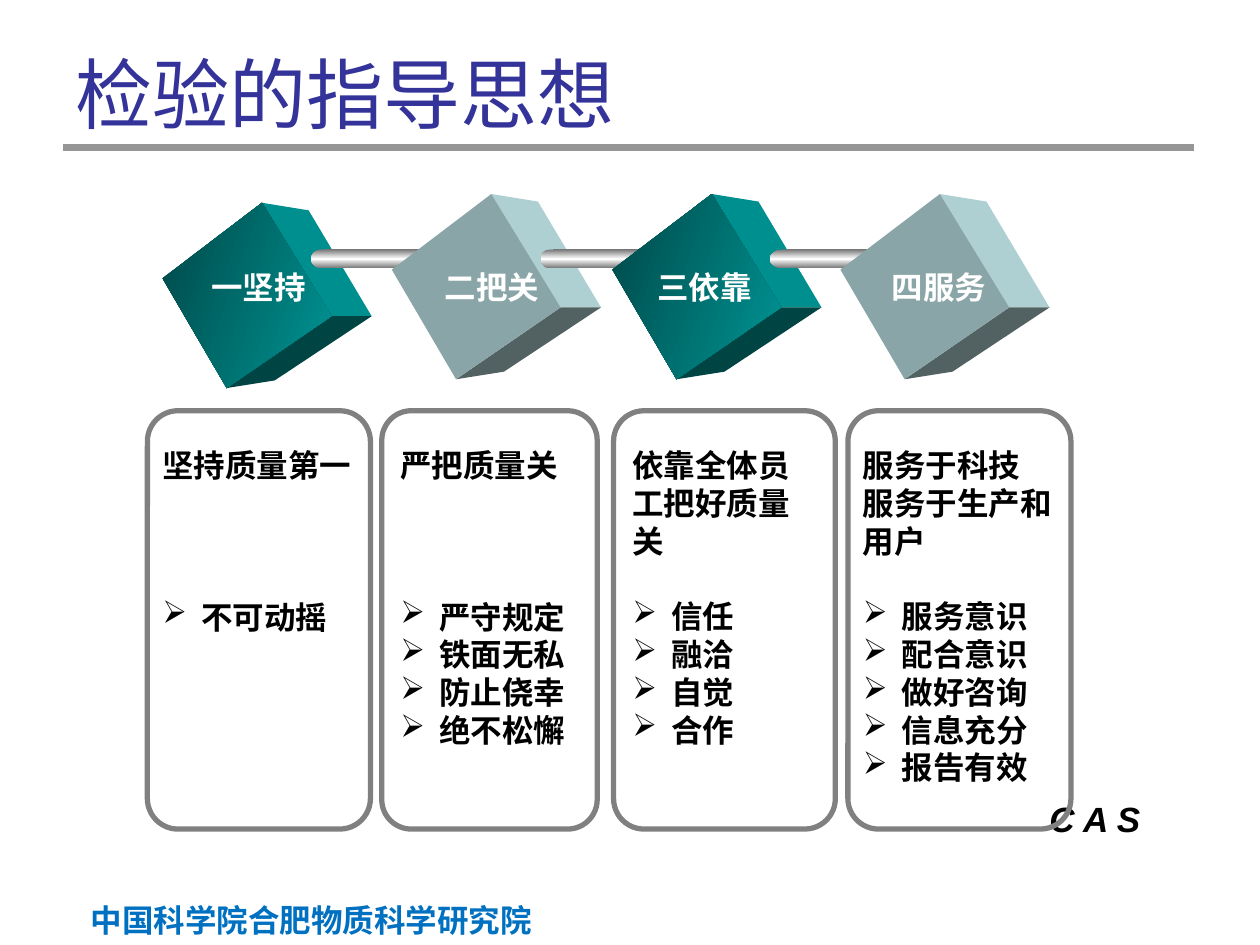
from typing import NamedTuple
from pptx import Presentation
from pptx.dml.color import RGBColor
from pptx.enum.shapes import MSO_CONNECTOR as Link, MSO_SHAPE as Kind
from pptx.enum.text import MSO_ANCHOR as Anchor, PP_ALIGN as Align
from pptx.oxml import parse_xml
from pptx.oxml.ns import nsdecls
from pptx.util import Inches, Pt


class Box(NamedTuple):
    x: float
    y: float
    w: float
    h: float


class Skin(NamedTuple):
    front: tuple
    side: str
    base: str


class Step(NamedTuple):
    name: str
    label: float
    cube: tuple
    skin: Skin
    card: Box
    note: Box
    wrap: bool
    heads: list
    gap: float
    items: list


class Rod(NamedTuple):
    x: float
    cap: float
    bar: float
    w: float


TEAL = Skin(("004848", "009494"), "008F8F", "004444")
PALE = Skin(("8AA5A8",), "AED0D2", "526263")
STEEL = ("767676", "FFFFFF", "767676")
BODY = {"name": "Arial", "size": Pt(18), "bold": True}

STEPS = [
    Step("一坚持", 1.58, (1.29, 1.61), TEAL, Box(1.17, 3.26, 1.77, 3.32),
         Box(1.19, 3.49, 1.79, 1.92), False, ["坚持质量第一"], 65, ["不可动摇"]),
    Step("二把关", 3.43, (3.11, 1.54), PALE, Box(3.03, 3.26, 1.71, 3.32),
         Box(3.08, 3.49, 1.53, 2.52), False, ["严把质量关"], 65,
         ["严守规定", "铁面无私", "防止侥幸", "绝不松懈"]),
    Step("三依靠", 5.12, (4.86, 1.54), TEAL, Box(4.87, 3.26, 1.76, 3.32),
         Box(4.92, 3.49, 1.67, 2.52), True, ["依靠全体员工把好质量关"], 21.6,
         ["信任", "融洽", "自觉", "合作"]),
    Step("四服务", 6.98, (6.67, 1.54), PALE, Box(6.73, 3.26, 1.77, 3.32),
         Box(6.75, 3.49, 1.75, 2.83), True, ["服务于科技", "服务于生产和用户"], 21.6,
         ["服务意识", "配合意识", "做好咨询", "信息充分", "报告有效"]),
]
RODS = [Rod(2.47, 0.17, 2.56, 0.82), Rod(4.29, 0.17, 4.39, 0.82),
        Rod(6.11, 0.22, 6.24, 1.07)]

LEFT, TOP, RIGHT, LOW = (0, 0.6), (0.79, 0), (1.34, 0.9), (0.51, 1.47)
TOP_BACK, RIGHT_BACK, LOW_BACK = (1.16, 0.06), (1.66, 0.9), (0.89, 1.41)


def tint(value: str) -> RGBColor:
    return RGBColor.from_string(value)


def place(box: Box) -> list:
    return [Inches(v) for v in box]


def paint(shape, tones: tuple, angle: int = 90) -> None:
    shape.shadow.inherit = False
    shape.line.fill.background()
    if len(tones) == 1:
        shape.fill.solid()
        shape.fill.fore_color.rgb = tint(tones[0])
        return
    last = len(tones) - 1
    stops = "".join(
        f'<a:gs pos="{i * 100000 // last}"><a:srgbClr val="{tone}"/></a:gs>'
        for i, tone in enumerate(tones))
    shape.fill.background()
    old = shape.element.spPr.find("./{*}noFill")
    new = parse_xml(f'<a:gradFill {nsdecls("a")}><a:gsLst>{stops}</a:gsLst>'
                    f'<a:lin ang="{angle * 60000}" scaled="0"/></a:gradFill>')
    shape.element.spPr.replace(old, new)


def style(run, color: str, look: dict) -> None:
    for key, value in look.items():
        setattr(run.font, key, value)
    run.font.color.rgb = tint(color)
    face = parse_xml(f'<a:ea {nsdecls("a")} typeface="{look["name"]}"/>')
    run.font._element.append(face)


def write(slide, box: Box, lines: list, color: str, look: dict, wrap: bool = True,
          align=Align.LEFT, anchor=Anchor.TOP) -> list:
    frame = slide.shapes.add_textbox(*place(box)).text_frame
    frame.word_wrap = wrap
    frame.vertical_anchor = anchor
    paras = []
    for i, line in enumerate(lines):
        para = frame.add_paragraph() if i else frame.paragraphs[0]
        para.alignment = align
        run = para.add_run()
        run.text = line
        style(run, color, look)
        paras.append(para)
    return paras


def bullet(para) -> None:
    props = para._p.get_or_add_pPr()
    props.set("marL", str(Inches(0.31)))
    props.set("indent", str(Inches(-0.31)))
    props.append(parse_xml(f'<a:buChar {nsdecls("a")} char="➢"/>'))


def face(slide, spot: tuple, points: list, tones: tuple) -> None:
    dots = [(Inches(spot[0] + x), Inches(spot[1] + y)) for x, y in points]
    pen = slide.shapes.build_freeform(*dots[0])
    pen.add_line_segments(dots[1:], close=True)
    paint(pen.convert_to_shape(), tones, 20)


def cube(slide, step: Step) -> None:
    skin = step.skin
    face(slide, step.cube, [TOP, TOP_BACK, RIGHT_BACK, RIGHT], (skin.side,))
    face(slide, step.cube, [RIGHT, RIGHT_BACK, LOW_BACK, LOW], (skin.base,))
    face(slide, step.cube, [LEFT, TOP, RIGHT, LOW], skin.front)


def link(slide, rod: Rod) -> None:
    for kind, x, w in ((Kind.OVAL, rod.x, rod.cap), (Kind.RECTANGLE, rod.bar, rod.w)):
        paint(slide.shapes.add_shape(kind, *place(Box(x, 1.98, w, 0.15))), STEEL)


def card(slide, box: Box) -> None:
    shape = slide.shapes.add_shape(Kind.ROUNDED_RECTANGLE, *place(box))
    shape.adjustments[0] = 0.137
    shape.shadow.inherit = False
    shape.fill.background()
    shape.line.color.rgb = tint("808080")
    shape.line.width = Pt(3)


def note(slide, step: Step) -> None:
    paras = write(slide, step.note, step.heads + step.items, "000000", BODY, step.wrap)
    items = paras[len(step.heads):]
    items[0].space_before = Pt(step.gap)
    for para in items:
        bullet(para)


def rule(slide) -> None:
    line = slide.shapes.add_connector(
        Link.STRAIGHT, *place(Box(0.5, 1.17, 9.48, 1.17)))
    line.line.color.rgb = tint("969696")
    line.line.width = Pt(3.6)
    line._element.spPr.append(parse_xml(f'<a:effectLst {nsdecls("a")}/>'))


def main() -> None:
    deck = Presentation()
    deck.slide_width, deck.slide_height = Inches(10), Inches(7.5)
    slide = deck.slides.add_slide(deck.slide_layouts[6])
    rule(slide)
    write(slide, Box(0.59, 7.1, 3.73, 0.4), ["中国科学院合肥物质科学研究院"],
          "0070C0", BODY, align=Align.RIGHT)
    write(slide, Box(8.23, 6.28, 0.94, 0.43), ["C A S"], "000000",
          {**BODY, "size": Pt(20), "italic": True}, wrap=False)
    write(slide, Box(0.5, 0.3, 6.08, 0.87), ["检验的指导思想"], "333399",
          {"name": "Noto Sans CJK JP", "size": Pt(44)}, anchor=Anchor.MIDDLE)
    for step in reversed(STEPS):
        card(slide, step.card)
    for i, step in enumerate(STEPS):
        cube(slide, step)
        if i < len(RODS):
            link(slide, RODS[i])
    for step in STEPS:
        write(slide, Box(step.label, 2.08, 0.97, 0.45), [step.name], "FFFFFF",
              {**BODY, "name": "Noto Sans CJK SC"}, wrap=False)
    for step in STEPS:
        note(slide, step)
    deck.save("out.pptx")


if __name__ == "__main__":
    main()
